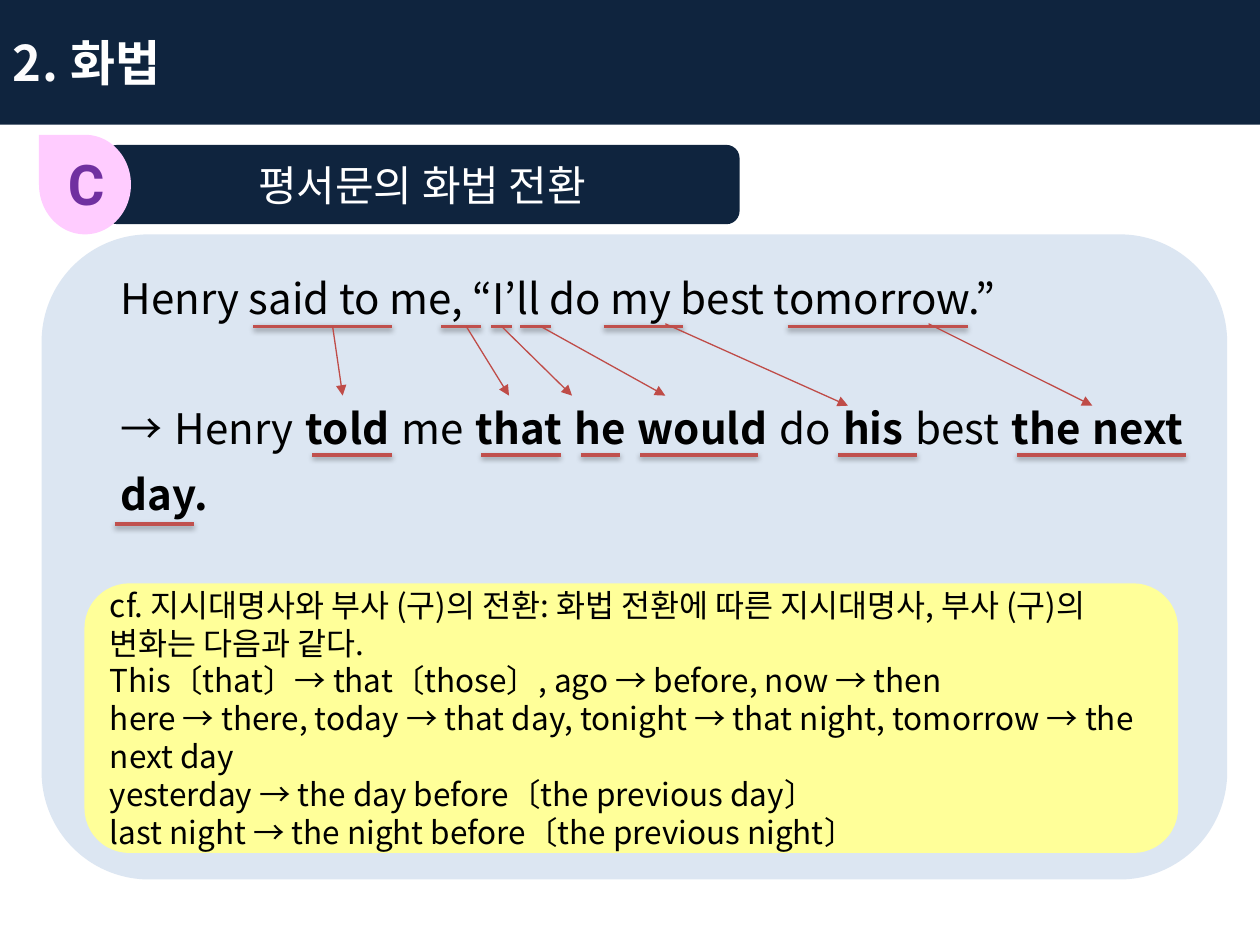
from lxml import etree
from pptx import Presentation
from pptx.dml.color import RGBColor
from pptx.enum import shapes, text
from pptx.oxml import ns
from pptx.util import Inches, Pt

COLORS = {
    "navy": "0F243E", "pale": "DCE6F2", "pink": "FFCCFF", "yellow": "FFFF99",
    "purple": "7030A0", "rule": "C0504D", "arrow": "BF4C48",
    "black": "000000", "white": "FFFFFF", "offwhite": "FCFCFD",
}
KOREAN = "Noto Sans CJK KR"
SHAPE = shapes.MSO_SHAPE
ALIGN = text.PP_ALIGN


def color(name):
    return RGBColor.from_string(COLORS[name])


def child(parent, tag, **attributes):
    values = {key: str(value) for key, value in attributes.items()}
    return etree.SubElement(parent, ns.qn(tag), **values)


def add_span(para, words, size=24, ink="black", bold=False, font=KOREAN, spacing=0):
    span = para.add_run()
    span.text = words
    span.font.size = Pt(size)
    span.font.bold = bold
    span.font.name = font
    span.font.color.rgb = color(ink)
    properties = span._r.get_or_add_rPr()
    child(properties, "a:ea", typeface=font)
    if spacing:
        properties.set("spc", str(spacing))


class Slide:
    def __init__(self, deck):
        self.page = deck.slides.add_slide(deck.slide_layouts[6])

    def panel(self, preset, place, fill, rotation=0):
        box = self.page.shapes.add_shape(preset, *map(Inches, place))
        box.shadow.inherit = False
        box.fill.solid()
        box.fill.fore_color.rgb = color(fill)
        box.line.fill.background()
        box.rotation = rotation
        box.text_frame.word_wrap = True
        box.text_frame.vertical_anchor = text.MSO_ANCHOR.MIDDLE
        return box

    def label(self, place, words, **style):
        box = self.page.shapes.add_textbox(*map(Inches, place))
        box.text_frame.word_wrap = True
        add_span(box.text_frame.paragraphs[0], words, **style)

    def fill_text(self, box, paragraphs, align=ALIGN.LEFT, **style):
        frame = box.text_frame
        for index, spans in enumerate(paragraphs):
            para = frame.add_paragraph() if index else frame.paragraphs[0]
            para.alignment = align
            for words, changes in spans:
                add_span(para, words, **{**style, **changes})
        return frame

    def line(self, start, end, ink, width):
        connector = self.page.shapes.add_connector(
            shapes.MSO_CONNECTOR.STRAIGHT, *map(Inches, (*start, *end)))
        connector.line.color.rgb = color(ink)
        connector.line.width = Pt(width)
        effects = child(connector._element.spPr, "a:effectLst")
        return connector, effects

    def underline(self, left, right, top):
        _, effects = self.line((left, top), (right, top), "rule", 2)
        shadow = child(effects, "a:outerShdw", blurRad=Pt(3.1), dist=Pt(1.6),
                       dir=90 * 60000, rotWithShape=0)
        tint = child(shadow, "a:srgbClr", val=COLORS["black"])
        child(tint, "a:alpha", val=38000)

    def arrow(self, start, end):
        connector, _ = self.line(start, end, "arrow", 0.75)
        child(connector.get_or_add_ln(), "a:tailEnd", type="triangle")


def main():
    deck = Presentation()
    deck.slide_width, deck.slide_height = Inches(10), Inches(7.5)
    slide = Slide(deck)
    rounded = SHAPE.FLOWCHART_ALTERNATE_PROCESS
    bold = {"bold": True}

    example = slide.panel(rounded, (0.33, 1.86, 9.41, 5.12), "pale")
    frame = slide.fill_text(example, [
        [("Henry said to me, “I’ll do my best tomorrow.”", {})],
        [("→ Henry ", {}), ("told", bold), (" me ", {}), ("that he would", bold),
         (" do ", {}), ("his", bold), (" best ", {}), ("the next day.", bold)],
    ], align=ALIGN.JUSTIFY)
    frame.margin_bottom = Inches(2.73)
    for para in frame.paragraphs:
        para.line_spacing = 1.3
        properties = para._p.get_or_add_pPr()
        properties.set("marL", str(Inches(0.28)))
        properties.set("indent", "0")
    frame.paragraphs[1].space_before = Pt(37)

    banner = slide.panel(rounded, (0.83, 1.15, 5.04, 0.63), "navy")
    slide.fill_text(banner, [[("평서문의 화법 전환", {})]], align=ALIGN.CENTER, ink="white")

    header = slide.panel(SHAPE.RECTANGLE, (0, 0, 10, 0.99), "navy")
    slide.fill_text(header, [[("2. ", {"ink": "offwhite", "spacing": 50}), ("화법", {})]],
                    size=28, ink="white", bold=True)

    slide.panel(SHAPE.TEAR, (0.28, 1.1, 0.79, 0.73), "pink", rotation=270)
    slide.label((0.44, 1.14, 0.47, 0.64), "C", size=32, ink="purple", bold=True, font="Roboto")

    underlines = {
        2.59: [(2.01, 3.11), (3.5, 3.82), (3.9, 4.06), (4.13, 4.37), (4.79, 5.42), (6.25, 7.68)],
        3.61: [(2.48, 3.11), (3.82, 4.45), (4.61, 4.92), (5.08, 6.02), (6.65, 7.28), (8.07, 9.41)],
        4.16: [(0.91, 1.54)],
    }
    for top, extents in underlines.items():
        for left, right in extents:
            slide.underline(left, right, top)

    for start, end in [(2.64, 2.72), (3.7, 4.04), (3.98, 4.54), (4.29, 5.28)]:
        slide.arrow((start, 2.59), (end, 3.14))
    for start, end in [(5.28, 6.73), (7.37, 8.67)]:
        slide.arrow((start, 2.57), (end, 3.22))

    note = slide.panel(rounded, (0.67, 4.63, 8.68, 2.14), "yellow")
    rules = [
        "cf. 지시대명사와 부사 (구)의 전환: 화법 전환에 따른 지시대명사, 부사 (구)의 변화는 다음과 같다.",
        "This〔that〕→ that〔those〕, ago → before, now → then",
        "here → there, today → that day, tonight → that night, tomorrow → the next day",
        "yesterday → the day before〔the previous day〕",
        "last night → the night before〔the previous night〕",
    ]
    slide.fill_text(note, [[(rule, {})] for rule in rules], size=18)

    deck.save("out.pptx")


if __name__ == "__main__":
    main()
